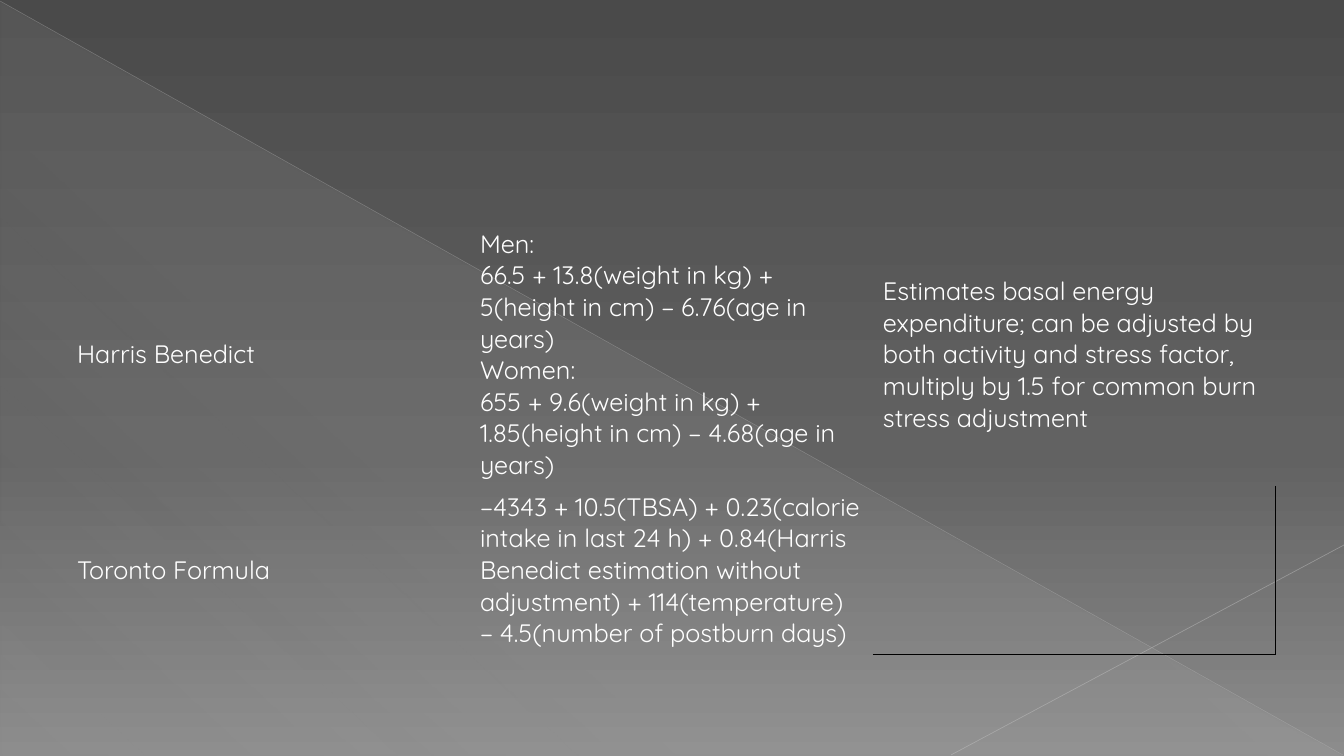
from lxml import etree
from pptx import Presentation
from pptx import util as u
from pptx.dml.color import RGBColor
from pptx.enum import shapes, text
from pptx.oxml.ns import qn

PX = 914400 / 100.8
WIDTH, HEIGHT = 1344, 756
FONT = "Quicksand"
NO_TABLE_STYLE = "{2D5ABB26-0587-4C30-8999-92F81FD0307C}"

WHITE = RGBColor(0xFF, 0xFF, 0xFF)
BLACK = RGBColor(0x00, 0x00, 0x00)
CHARCOAL = RGBColor(0x4A, 0x4A, 0x4A)
GRAPHITE = RGBColor(0x62, 0x62, 0x62)
ASH = RGBColor(0x8C, 0x8C, 0x8C)
HAZE = RGBColor(0xD2, 0xD2, 0xD2)
SILVER = RGBColor(0xBF, 0xBF, 0xBF)
PEARL = RGBColor(0xC6, 0xC6, 0xC6)

FORMULAS = [
    [
        "Harris Benedict",
        "Men:\n66.5 + 13.8(weight in kg) + 5(height in cm) − 6.76(age in years)\n"
        "Women:\n655 + 9.6(weight in kg) + 1.85(height in cm) − 4.68(age in years)",
        "Estimates basal energy expenditure; can be adjusted by both activity and "
        "stress factor, multiply by 1.5 for common burn stress adjustment",
    ],
    [
        "Toronto Formula",
        "−4343 + 10.5(TBSA) + 0.23(calorie intake in last 24 h) + 0.84(Harris Benedict "
        "estimation without adjustment) + 114(temperature) − 4.5(number of postburn days)",
        "",
    ],
]


def px(length):
    return u.Emu(round(length * PX))


def add_color(parent, color, opacity=100):
    """Append an sRGB colour with its opacity in percent."""
    srgb = etree.SubElement(parent, qn("a:srgbClr"), val=str(color))
    if opacity < 100:
        etree.SubElement(srgb, qn("a:alpha"), val=str(opacity * 1000))


class Board:
    def __init__(self, deck):
        self.slide = deck.slides.add_slide(deck.slide_layouts[6])

    def gradient(self, fill, owner, stops, angle):
        """Fill with (position, colour, opacity) stops; the angle runs clockwise."""
        fill.gradient()
        fill.gradient_angle = 360 - angle
        stop_list = next(owner.iter(qn("a:gsLst")))
        for default_stop in list(stop_list):
            stop_list.remove(default_stop)
        for position, color, opacity in stops:
            stop = etree.SubElement(stop_list, qn("a:gs"), pos=str(position * 1000))
            add_color(stop, color, opacity)

    def backdrop(self, stops, angle):
        self.gradient(self.slide.background.fill, self.slide.element, stops, angle)

    def triangle(self, box, stops, angle):
        corner = self.slide.shapes.add_shape(
            shapes.MSO_SHAPE.RIGHT_TRIANGLE, *map(px, box))
        corner.shadow.inherit = False
        corner.line.fill.background()
        self.gradient(corner.fill, corner.element, stops, angle)

    def line(self, ends, color, width, opacity):
        ray = self.slide.shapes.add_connector(
            shapes.MSO_CONNECTOR.STRAIGHT, *map(px, ends))
        ray.line.width = u.Pt(width)
        ray.line.color.rgb = color
        srgb = next(ray.element.iter(qn("a:srgbClr")))
        etree.SubElement(srgb, qn("a:alpha"), val=str(opacity * 1000))
        etree.SubElement(ray.element.spPr, qn("a:effectLst"))

    def table(self, content, left, top, col_width, row_heights):
        columns = len(content[0])
        frame = self.slide.shapes.add_table(
            len(content), columns, px(left), px(top),
            px(col_width * columns), px(sum(row_heights)))
        grid = frame.table
        grid.first_row = grid.horz_banding = False
        next(frame.element.iter(qn("a:tableStyleId"))).text = NO_TABLE_STYLE
        for column in grid.columns:
            column.width = px(col_width)
        for row, height, wordings in zip(grid.rows, row_heights, content):
            row.height = px(height)
            for cell, wording in zip(row.cells, wordings):
                self.cell_text(cell, wording)
        return frame

    def cell_text(self, cell, wording):
        cell.fill.background()
        cell.vertical_anchor = text.MSO_ANCHOR.MIDDLE
        paragraph = cell.text_frame.paragraphs[0]
        paragraph.font.size = u.Pt(18)
        if not wording:
            return
        for index, part in enumerate(wording.split("\n")):
            if index:
                paragraph.add_line_break()
            run = paragraph.add_run()
            run.text = part
            run.font.name = FONT
            run.font.size = u.Pt(18)
            run.font.color.rgb = WHITE

    def last_cell_border(self, frame, sides, color, width):
        """Rule the given sides, named in the order L, R, T, B."""
        properties = list(frame.element.iter(qn("a:tcPr")))[-1]
        for index, side in enumerate(sides):
            edge = etree.Element(qn(f"a:ln{side}"), w=str(u.Pt(width)))
            add_color(etree.SubElement(edge, qn("a:solidFill")), color)
            properties.insert(index, edge)


def main():
    deck = Presentation()
    deck.slide_width, deck.slide_height = px(WIDTH), px(HEIGHT)
    board = Board(deck)
    board.backdrop([(0, CHARCOAL, 100), (60, GRAPHITE, 100), (100, ASH, 100)], 90)
    board.triangle((1, 2, 1342, 754), [(0, HAZE, 10), (70, HAZE, 8), (100, HAZE, 1)], 133)
    board.line((0, 1, 1343, 755), SILVER, 0.39, 35)
    board.line((1344, 545, 951, 755), PEARL, 0.47, 45)
    formulas = board.table(FORMULAS, 67, 223, 403, [263, 168])
    board.last_cell_border(formulas, "RB", BLACK, 0.75)
    deck.save("out.pptx")


if __name__ == "__main__":
    main()
